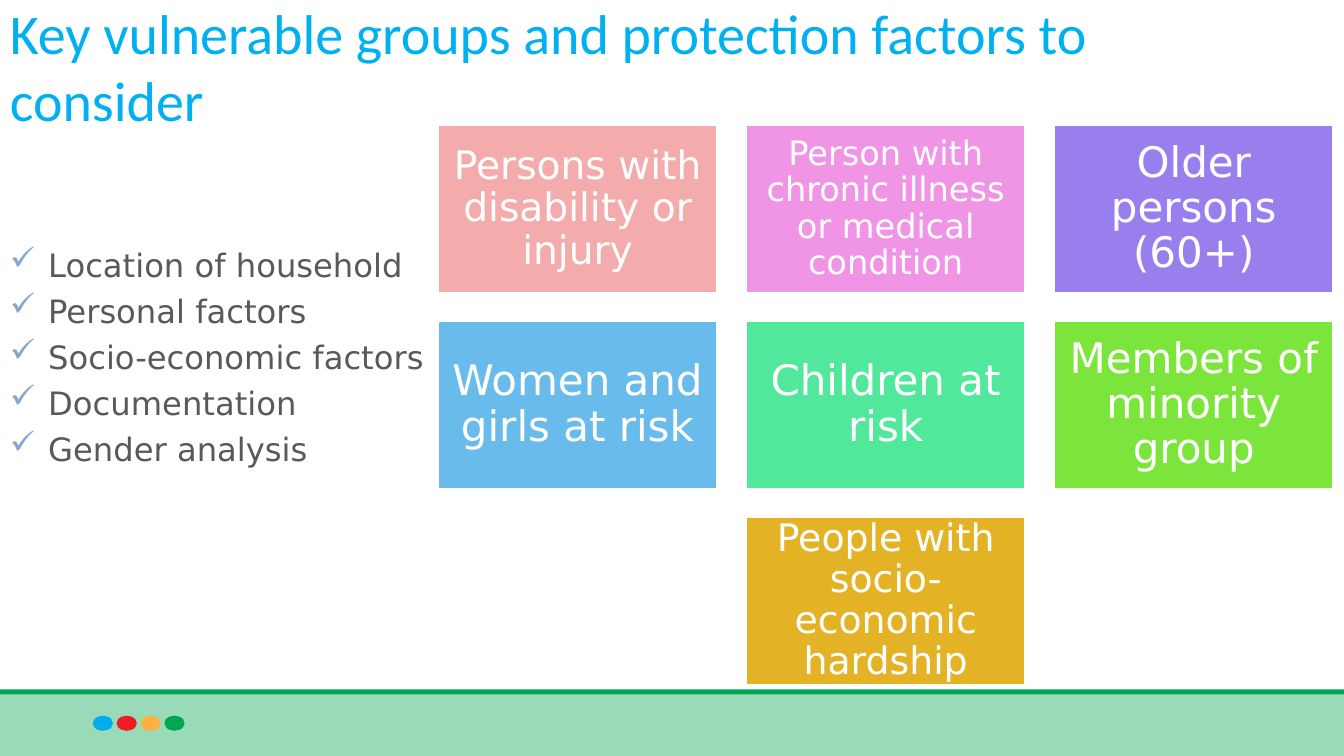
import pptx
import pptx.dml.color
import pptx.enum.shapes
import pptx.enum.text
import pptx.oxml
import pptx.oxml.ns
import pptx.util
from dataclasses import dataclass

SHAPES = pptx.enum.shapes.MSO_SHAPE
ALIGN = pptx.enum.text.PP_ALIGN
ANCHOR = pptx.enum.text.MSO_ANCHOR
WIDTH, HEIGHT = 13.33, 7.5


@dataclass(frozen=True)
class Theme:
    title_font: str = "Calibri"
    body_font: str = "DejaVu Sans"
    title_size: int = 40
    list_size: int = 23
    title: str = "00B0F0"
    body: str = "595959"
    bullet: str = "85A7CF"
    white: str = "FFFFFF"
    band: str = "99DBB9"
    rule: str = "00A651"
    dots: tuple = ("00AEEF", "ED1C24", "FBB040", "00A651")


THEME = Theme()

FACTORS = ["Location of household", "Personal factors", "Socio-economic factors",
           "Documentation", "Gender analysis"]

# Wording, fill, type size
GROUPS = [
    ("Persons with disability or injury", "F3ABAC", 28),
    ("Person with chronic illness or medical condition", "F095E6", 24),
    ("Older persons (60+)", "997FED", 30),
    ("Women and girls at risk", "68BBEB", 30),
    ("Children at risk", "52E89C", 30),
    ("Members of minority group", "7CE53C", 30),
    ("People with socio-economic hardship", "E3B325", 27),
]


def rgb(value):
    return pptx.dml.color.RGBColor.from_string(value)


def inches(box):
    return [pptx.util.Inches(length) for length in box]


def style(paragraph, font_name, size, color):
    for run in paragraph.runs:
        run.font.name = font_name
        run.font.size = pptx.util.Pt(size)
        run.font.color.rgb = rgb(color)


def add_filled(slide, kind, box, fill):
    shape = slide.shapes.add_shape(kind, *inches(box))
    shape.shadow.inherit = False
    shape.fill.solid()
    shape.fill.fore_color.rgb = rgb(fill)
    shape.line.fill.background()
    return shape


def add_bullet(paragraph, color, indent):
    properties = paragraph._p.get_or_add_pPr()
    properties.set("marL", str(pptx.util.Inches(indent)))
    properties.set("indent", str(-pptx.util.Inches(indent)))
    namespace = pptx.oxml.ns.nsdecls("a")
    for xml in (f'<a:buClr {namespace}><a:srgbClr val="{color}"/></a:buClr>',
                f'<a:buChar {namespace} char="✓"/>'):
        properties.append(pptx.oxml.parse_xml(xml))


def add_footer(slide, box):
    left, top, width, height = box
    add_filled(slide, SHAPES.RECTANGLE, box, THEME.band)
    add_filled(slide, SHAPES.RECTANGLE, (left, top - 0.03, width, 0.05), THEME.rule)
    for index, color in enumerate(THEME.dots):
        dot = (left + 0.92 + index * 0.237, top + 0.23, 0.2, 0.15)
        add_filled(slide, SHAPES.OVAL, dot, color)


def add_title(slide, box, text):
    text_frame = slide.shapes.add_textbox(*inches(box)).text_frame
    text_frame.word_wrap = True
    text_frame.vertical_anchor = ANCHOR.BOTTOM
    text_frame.text = text
    style(text_frame.paragraphs[0], THEME.title_font, THEME.title_size, THEME.title)


def add_checklist(slide, box, items):
    text_frame = slide.shapes.add_textbox(*inches(box)).text_frame
    text_frame.word_wrap = True
    text_frame.text = "\n".join(items)
    for index, paragraph in enumerate(text_frame.paragraphs):
        paragraph.alignment = ALIGN.JUSTIFY
        if index:
            paragraph.space_before = pptx.util.Pt(5.3)
        add_bullet(paragraph, THEME.bullet, 0.38)
        style(paragraph, THEME.body_font, THEME.list_size, THEME.body)


def add_card(slide, box, text, fill, size):
    card = add_filled(slide, SHAPES.RECTANGLE, box, fill)
    card.line.color.rgb = rgb(THEME.white)
    card.line.width = pptx.util.Pt(2)
    text_frame = card.text_frame
    text_frame.word_wrap = True
    text_frame.vertical_anchor = ANCHOR.MIDDLE
    inset = pptx.util.Pt(size * 0.3)
    text_frame.margin_left = text_frame.margin_right = inset
    text_frame.margin_top = text_frame.margin_bottom = inset
    text_frame.text = text
    paragraph = text_frame.paragraphs[0]
    paragraph.alignment = ALIGN.CENTER
    paragraph.line_spacing = 0.9
    style(paragraph, THEME.body_font, size, THEME.white)


def add_card_grid(slide, box, groups, columns=3):
    """Cards are 5:3, gaps a tenth of a card wide, a short last row is centred."""
    left, top, width, _ = box
    card_width = width / (columns + (columns - 1) * 0.1)
    card_height = card_width * 0.6
    gap = card_width * 0.1
    for index, (text, fill, size) in enumerate(groups):
        row, column = divmod(index, columns)
        in_row = min(columns, len(groups) - row * columns)
        column += (columns - in_row) / 2
        card = (left + column * (card_width + gap), top + row * (card_height + gap),
                card_width, card_height)
        add_card(slide, card, text, fill, size)


def main():
    presentation = pptx.Presentation()
    presentation.slide_width, presentation.slide_height = inches((WIDTH, HEIGHT))
    slide = presentation.slides.add_slide(presentation.slide_layouts[6])
    add_footer(slide, (0, 6.87, WIDTH, HEIGHT - 6.87))
    add_title(slide, (0, 0, 12.7, 1.37),
              "Key vulnerable groups and protection factors to consider")
    add_checklist(slide, (0, 2.38, 11.5, 4.02), FACTORS)
    add_card_grid(slide, (4.34, 1.24, 8.89, 5.56), GROUPS)
    presentation.save("out.pptx")


if __name__ == "__main__":
    main()
